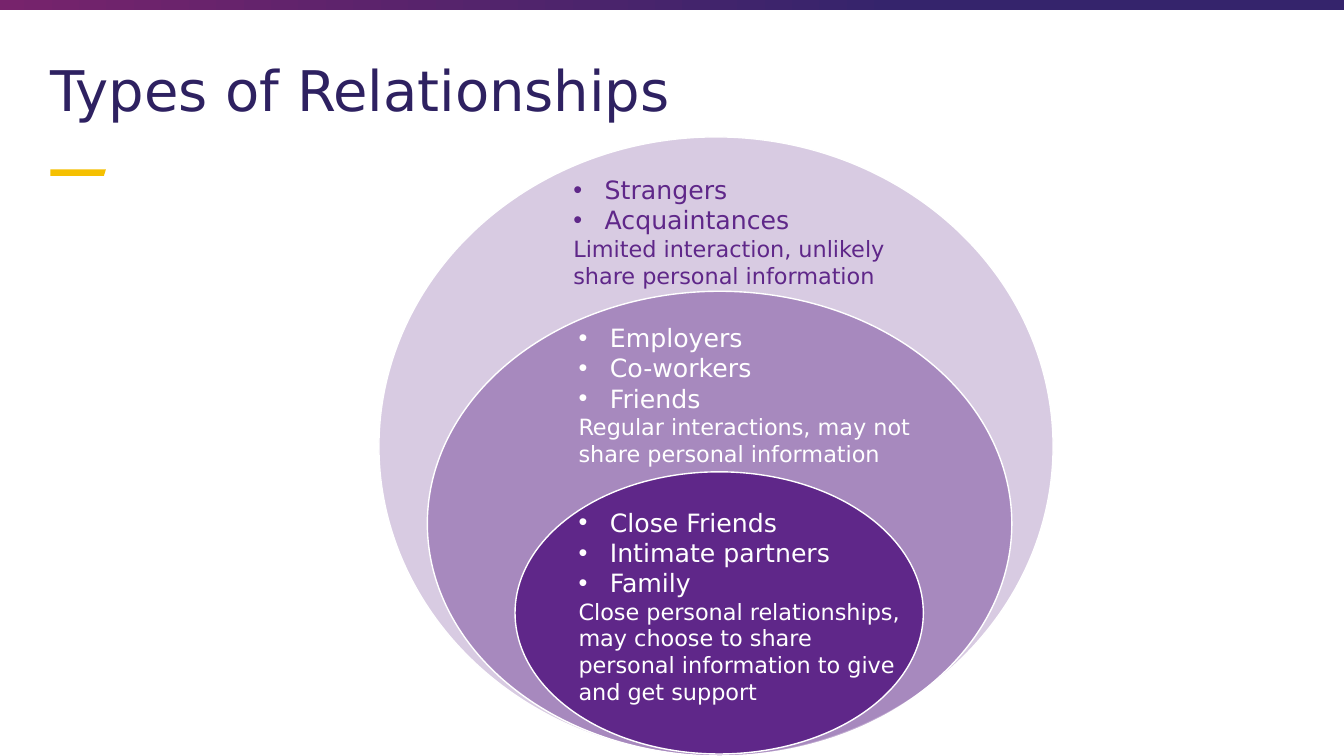
from lxml import etree
from pptx import Presentation
from pptx.dml.color import RGBColor
from pptx.enum.shapes import MSO_SHAPE
from pptx.oxml.ns import qn
from pptx.util import Cm, Pt

OVAL = MSO_SHAPE.OVAL
RECTANGLE = MSO_SHAPE.RECTANGLE

FONT = "DejaVu Sans"
WHITE = RGBColor(0xFF, 0xFF, 0xFF)
PURPLE = RGBColor(0x5F, 0x27, 0x89)
NAVY = RGBColor(0x2E, 0x21, 0x61)
BAR_NAVY = RGBColor(0x35, 0x24, 0x6C)
BAR_PLUM = RGBColor(0x77, 0x23, 0x6C)
YELLOW = RGBColor(0xF5, 0xC0, 0x01)

TITLE = "Types of Relationships"
# Boxes are left, top, width, height in centimetres; circles go from outer to inner.
TITLE_BOX = (1.02, 1.47, 31.7, 2.41)
BAR_BOX = (-0.08, 0, 34.04, 0.25)
ACCENT_POINTS = [(1.27, 4.27), (2.67, 4.27), (2.62, 4.43), (1.27, 4.43)]
BULLET_INDENT = Cm(0.79)
CIRCLES = [
    {
        "oval": (9.55, 3.45, 16.99, 15.6), "opacity": 24,
        "text_box": (14.2, 4.27, 8.69, 3.18), "text_color": PURPLE,
        "people": ["Strangers", "Acquaintances"],
        "summary": "Limited interaction, unlikely share personal information",
    },
    {
        "oval": (10.77, 7.34, 14.73, 11.71), "opacity": 40,
        "text_box": (14.33, 8, 9.14, 3.94), "text_color": WHITE,
        "people": ["Employers", "Co-workers", "Friends"],
        "summary": "Regular interactions, may not share personal information",
    },
    {
        "oval": (12.98, 11.89, 10.29, 7.11), "opacity": 100,
        "text_box": (14.33, 12.65, 8.69, 6.07), "text_color": WHITE,
        "people": ["Close Friends", "Intimate partners", "Family"],
        "summary": "Close personal relationships, may choose to share "
                   "personal information to give and get support",
    },
]


def to_cm(box):
    return [Cm(value) for value in box]


def add_bar(slide):
    bar = slide.shapes.add_shape(RECTANGLE, *to_cm(BAR_BOX))
    bar.shadow.inherit = False
    bar.line.fill.background()
    bar.fill.gradient()
    bar.fill.gradient_angle = 0
    stops = [(0, BAR_PLUM), (0.67, BAR_NAVY)]
    for stop, (position, color) in zip(bar.fill.gradient_stops, stops):
        stop.position = position
        stop.color.rgb = color


def add_accent(slide):
    points = [to_cm(point) for point in ACCENT_POINTS]
    builder = slide.shapes.build_freeform(*points[0])
    builder.add_line_segments(points[1:], close=True)
    accent = builder.convert_to_shape()
    accent.shadow.inherit = False
    accent.fill.solid()
    accent.fill.fore_color.rgb = YELLOW
    accent.line.fill.background()


def add_text(slide, box, lines, color):
    """Add a text box; each line is (text, size in points, bulleted)."""
    text_frame = slide.shapes.add_textbox(*to_cm(box)).text_frame
    text_frame.word_wrap = True
    text_frame.text = "\n".join(text for text, _, _ in lines)
    for paragraph, (_, size, bulleted) in zip(text_frame.paragraphs, lines):
        if bulleted:
            properties = paragraph._p.get_or_add_pPr()
            properties.set("marL", str(BULLET_INDENT))
            properties.set("indent", str(-BULLET_INDENT))
            etree.SubElement(properties, qn("a:buFont"), typeface="Arial")
            etree.SubElement(properties, qn("a:buChar"), char="•")
        for run in paragraph.runs:
            run.font.name = FONT
            run.font.size = Pt(size)
            run.font.color.rgb = color
    return text_frame


def add_oval(slide, box, opacity):
    oval = slide.shapes.add_shape(OVAL, *to_cm(box))
    oval.shadow.inherit = False
    oval.fill.solid()
    oval.fill.fore_color.rgb = PURPLE
    oval.line.color.rgb = WHITE
    oval.line.width = Pt(1)
    if opacity < 100:
        color = oval._element.spPr.find(qn("a:solidFill")).find(qn("a:srgbClr"))
        etree.SubElement(color, qn("a:alpha"), val=str(opacity * 1000))


def main():
    presentation = Presentation()
    presentation.slide_width = Cm(33.87)
    presentation.slide_height = Cm(19.05)
    slide = presentation.slides.add_slide(presentation.slide_layouts[6])

    add_bar(slide)
    add_accent(slide)
    title = add_text(slide, TITLE_BOX, [(TITLE, 40, False)], NAVY)
    title.paragraphs[0].line_spacing = 0.9

    for circle in CIRCLES:
        add_oval(slide, circle["oval"], circle["opacity"])
    for circle in CIRCLES:
        lines = [(person, 18, True) for person in circle["people"]]
        lines.append((circle["summary"], 16, False))
        add_text(slide, circle["text_box"], lines, circle["text_color"])

    presentation.save("out.pptx")


if __name__ == "__main__":
    main()
